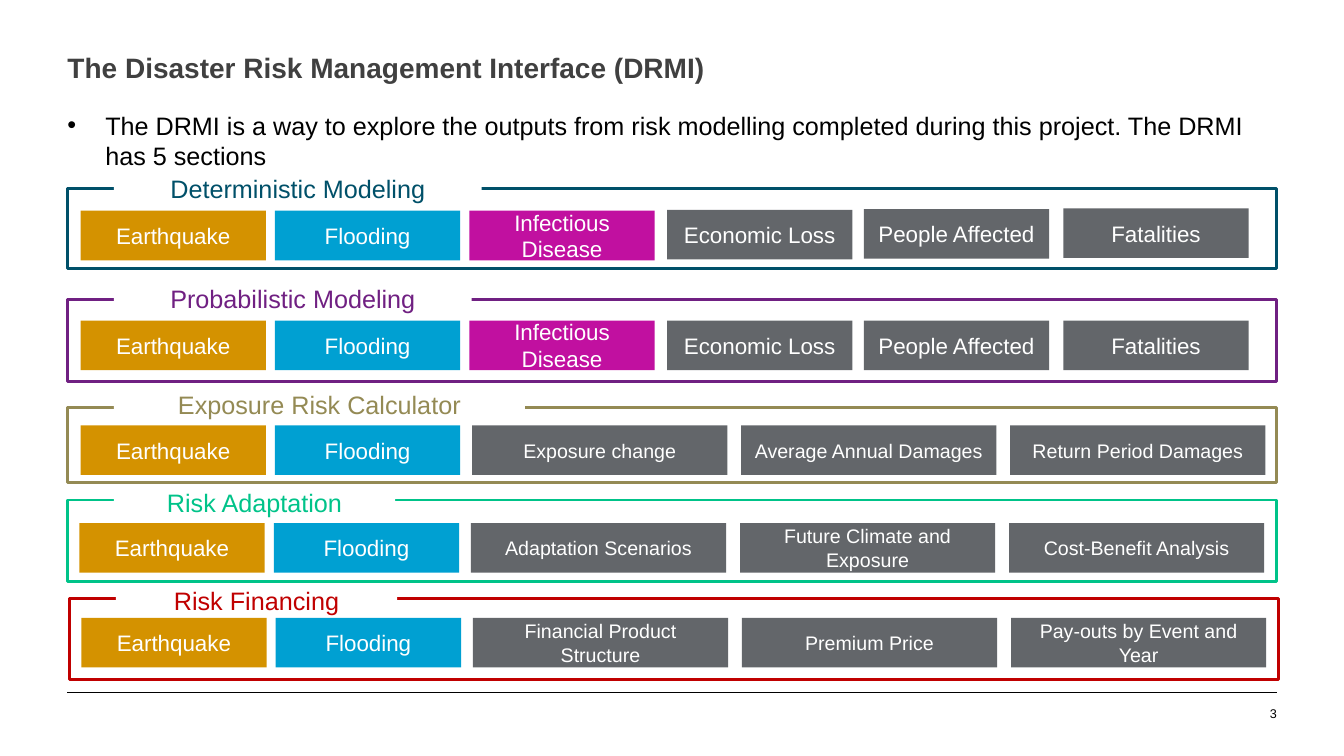
import pptx
import pptx.util
import pptx.dml.color
import pptx.enum.shapes
import pptx.enum.text
import pptx.oxml.xmlchemy
import lxml.etree

Cm = pptx.util.Cm
Pt = pptx.util.Pt
RGBColor = pptx.dml.color.RGBColor
ALIGN = pptx.enum.text.PP_ALIGN
ANCHOR = pptx.enum.text.MSO_ANCHOR
FIT = pptx.enum.text.MSO_AUTO_SIZE
RECT = pptx.enum.shapes.MSO_SHAPE.RECTANGLE
LINE = pptx.enum.shapes.MSO_CONNECTOR.STRAIGHT

WHITE = RGBColor(0xFF, 0xFF, 0xFF)
BLACK = RGBColor(0x00, 0x00, 0x00)
DARK = RGBColor(0x40, 0x40, 0x40)
GRAY = RGBColor(0x63, 0x66, 0x6A)
GOLD = RGBColor(0xD4, 0x92, 0x00)
BLUE = RGBColor(0x00, 0xA0, 0xD2)
PINK = RGBColor(0xC1, 0x10, 0xA0)
TEAL = RGBColor(0x00, 0x50, 0x69)
PURPLE = RGBColor(0x70, 0x20, 0x82)
OLIVE = RGBColor(0x94, 0x8A, 0x54)
GREEN = RGBColor(0x00, 0xC3, 0x89)
RED = RGBColor(0xC0, 0x00, 0x00)

TITLE = "The Disaster Risk Management Interface (DRMI)"
INTRO = ("The DRMI is a way to explore the outputs from risk modelling "
         "completed during this project. The DRMI has 5 sections")
PAGE = "3"

HAZARDS = {"Earthquake": GOLD, "Flooding": BLUE, "Infectious Disease": PINK}
BASE = ["Earthquake", "Flooding"]
MODEL = BASE + ["Infectious Disease", "Economic Loss", "People Affected", "Fatalities"]

SECTIONS = [
    dict(name="Deterministic Modeling", color=TEAL, frame=(1.7, 4.75, 2.01),
         label=(4.29, 9.27, 0.91), tile=(2.03, 5.31), rise=0.02, items=MODEL),
    dict(name="Probabilistic Modeling", color=PURPLE, frame=(1.7, 7.54, 2.08),
         label=(7.16, 9.02, 0.71), tile=(2.03, 8.08), rise=0, items=MODEL),
    dict(name="Exposure Risk Calculator", color=OLIVE, frame=(1.7, 10.26, 1.9),
         label=(9.73, 10.36, 0.91), tile=(2.03, 10.72), rise=0,
         items=BASE + ["Exposure change", "Average Annual Damages", "Return Period Damages"]),
    dict(name="Risk Adaptation", color=GREEN, frame=(1.7, 12.6, 2.06),
         label=(12.24, 7.09, 0.84), tile=(2.0, 13.18), rise=0,
         items=BASE + ["Adaptation Scenarios", "Future Climate and Exposure",
                       "Cost-Benefit Analysis"]),
    dict(name="Risk Financing", color=RED, frame=(1.75, 15.09, 2.03),
         label=(14.71, 7.09, 0.84), tile=(2.05, 15.57), rise=0,
         items=BASE + ["Financial Product Structure", "Premium Price",
                       "Pay-outs by Event and Year"]),
]

WIDE = 30.48
INSET = 1.17
HIGH = 1.25
NARROW = 4.67
BROAD = 6.43
SIX = [0, 4.9, 9.8, 14.78, 19.74, 24.77]
FIVE = [0, 4.9, 9.87, 16.65, 23.43]
FLUSH = dict(margin_left=0, margin_right=0, margin_top=0, margin_bottom=0)


def apply(target, form):
    for key, value in form.items():
        setattr(target, key, value)


def write(shape, text, size, color, align, anchor, bold=False, after=0, **extra):
    frame = shape.text_frame
    frame.text = text
    apply(frame, dict(word_wrap=True, auto_size=FIT.NONE, vertical_anchor=anchor, **extra))
    para = frame.paragraphs[0]
    apply(para, dict(alignment=align, space_before=Pt(0), space_after=Pt(after)))
    apply(para.font, dict(name="Arial", size=Pt(size), bold=bold))
    para.font.color.rgb = color


def place(shape, box):
    apply(shape, dict(zip(("left", "top", "width", "height"), map(Cm, box))))


def block(group, box, fill=None, edge=None):
    shape = group.shapes.add_shape(RECT, *map(Cm, box))
    shape.shadow.inherit = False
    if fill is None:
        shape.fill.background()
    else:
        shape.fill.solid()
        shape.fill.fore_color.rgb = fill
    if edge is None:
        shape.line.fill.background()
    else:
        shape.line.color.rgb = edge
        shape.line.width = Pt(2)
    return shape


def section(slide, part):
    group = slide.shapes.add_group_shape()
    left, top, high = part["frame"]
    block(group, (left, top, WIDE, high), edge=part["color"])
    y, width, tall = part["label"]
    label = block(group, (left + INSET, y, width, tall), fill=WHITE)
    write(label, part["name"], 18, part["color"], ALIGN.CENTER, ANCHOR.MIDDLE)
    x, y = part["tile"]
    items = part["items"]
    steps = SIX if len(items) == len(SIX) else FIVE
    for i, (step, item) in enumerate(zip(steps, items)):
        broad = steps is FIVE and item not in HAZARDS
        up = max(0, i - 2) * part["rise"]
        box = (x + step, y - up, BROAD if broad else NARROW, HIGH)
        tile = block(group, box, fill=HAZARDS.get(item, GRAY))
        write(tile, item, 14 if broad else 16, WHITE, ALIGN.CENTER, ANCHOR.MIDDLE)


def main():
    deck = pptx.Presentation()
    apply(deck, dict(slide_width=Cm(33.87), slide_height=Cm(19.05)))
    slide = deck.slides.add_slide(deck.slide_layouts[1])

    title = slide.shapes.title
    place(title, (1.7, 1.27, WIDE, 0.86))
    write(title, TITLE, 20, DARK, ALIGN.LEFT, ANCHOR.TOP, bold=True, **FLUSH)

    body = slide.placeholders[1]
    place(body, (1.7, 2.77, 30.76, 1.52))
    props = body.text_frame.paragraphs[0]._p.get_or_add_pPr()
    props.set("marL", "0")
    props.set("indent", "0")
    lxml.etree.SubElement(props, pptx.oxml.ns.qn("a:buNone"))
    write(body, INTRO, 18, BLACK, ALIGN.LEFT, ANCHOR.TOP, after=3.5, **FLUSH)

    rule = slide.shapes.add_connector(LINE, Cm(1.7), Cm(17.45), Cm(1.7 + WIDE), Cm(17.45))
    rule.line.color.rgb = BLACK
    rule.line.width = Pt(0.25)
    lxml.etree.SubElement(rule._element.spPr, pptx.oxml.ns.qn("a:effectLst"))

    page = slide.shapes.add_textbox(Cm(30.76), Cm(17.78), Cm(1.42), Cm(0.38))
    write(page, PAGE, 9, BLACK, ALIGN.RIGHT, ANCHOR.BOTTOM, **FLUSH)

    for part in SECTIONS:
        section(slide, part)

    deck.save("out.pptx")


if __name__ == "__main__":
    main()
